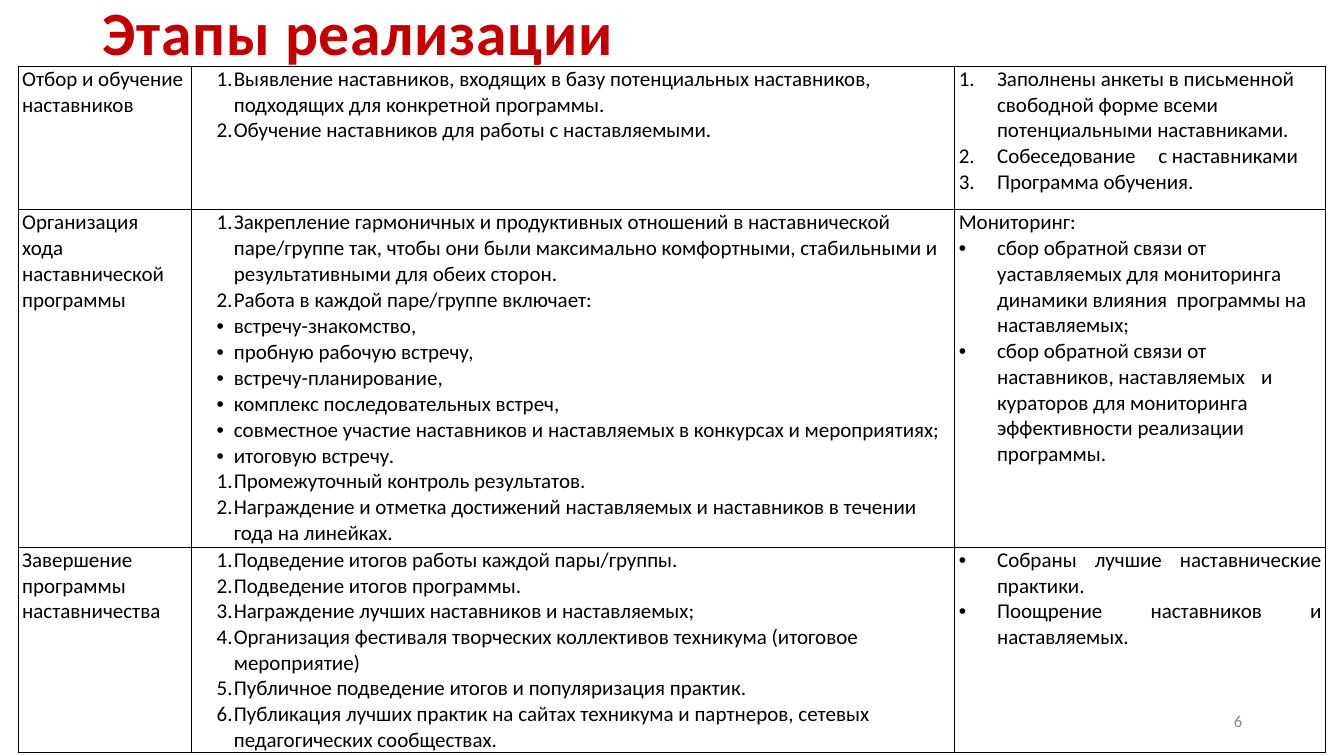
"""Build the slide with the table of mentoring programme stages."""
from dataclasses import dataclass

from lxml.etree import SubElement
from pptx import Presentation
from pptx.dml.color import RGBColor
from pptx.enum.text import MSO_ANCHOR, MSO_AUTO_SIZE, PP_ALIGN
from pptx.oxml import parse_xml
from pptx.oxml.ns import nsdecls, qn
from pptx.util import Emu, Pt

EMU_PER_PX = 9144
FONT = "Calibri"
BLACK = RGBColor(0x00, 0x00, 0x00)
RED = RGBColor(0xC0, 0x00, 0x00)
GREY = RGBColor(0x88, 0x88, 0x88)
WHITE = RGBColor(0xFF, 0xFF, 0xFF)

PLAIN, NUMBER, BULLET = "plain", "number", "bullet"
COLUMN_WIDTHS = (172, 757, 368)
HANGING_INDENTS = (0, 17, 38)
TEXT_INDENT = 38
CELL_MARGIN = 4


@dataclass(frozen=True)
class Entry:
    text: str
    marker: str = PLAIN
    justified: bool = False
    tabs: tuple[int, ...] = ()


@dataclass(frozen=True)
class Stage:
    height: int
    space_before: float
    name: list[Entry]
    actions: list[Entry]
    results: list[Entry]


STAGES = [
    Stage(
        142, 0,
        [Entry("Отбор и обучение наставников")],
        [
            Entry("Выявление наставников, входящих в базу потенциальных наставников, "
                  "подходящих для конкретной программы.", NUMBER),
            Entry("Обучение наставников для работы с наставляемыми.", NUMBER, True),
        ],
        [
            Entry("Заполнены анкеты в письменной свободной форме всеми "
                  "потенциальными наставниками.", NUMBER),
            Entry("Собеседование\tс наставниками", NUMBER, tabs=(20, 132, 164, 198)),
            Entry("Программа обучения.", NUMBER),
        ],
    ),
    Stage(
        335, 0.2,
        [Entry("Организация"), Entry("хода"), Entry("наставнической"), Entry("программы")],
        [
            Entry("Закрепление гармоничных и продуктивных отношений в наставнической "
                  "паре/группе так, чтобы они были максимально комфортными, стабильными "
                  "и результативными для обеих сторон.", NUMBER),
            Entry("Работа в каждой паре/группе включает:", NUMBER),
            Entry("встречу-знакомство,", BULLET),
            Entry("пробную рабочую встречу,", BULLET),
            Entry("встречу-планирование,", BULLET),
            Entry("комплекс последовательных встреч,", BULLET),
            Entry("совместное участие наставников и наставляемых в конкурсах и "
                  "мероприятиях;", BULLET),
            Entry("итоговую встречу.", BULLET),
            Entry("Промежуточный контроль результатов.", NUMBER),
            Entry("Награждение и отметка достижений наставляемых и наставников в "
                  "течении года на линейках.", NUMBER),
        ],
        [
            Entry("Мониторинг:"),
            Entry("сбор обратной связи от yаставляемых для мониторинга динамики "
                  "влияния  программы на наставляемых;", BULLET),
            Entry("сбор обратной связи от наставников, наставляемых\tи кураторов для "
                  "мониторинга эффективности реализации программы.", BULLET),
        ],
    ),
    Stage(
        204, 0,
        [Entry("Завершение программы наставничества", justified=True)],
        [
            Entry("Подведение итогов работы каждой пары/группы.", NUMBER),
            Entry("Подведение итогов программы.", NUMBER),
            Entry("Награждение лучших наставников и наставляемых;", NUMBER),
            Entry("Организация фестиваля творческих коллективов техникума "
                  "(итоговое мероприятие)", NUMBER),
            Entry("Публичное подведение итогов и популяризация практик.", NUMBER),
            Entry("Публикация лучших практик на сайтах техникума и партнеров, "
                  "сетевых педагогических сообществах.", NUMBER),
        ],
        [
            Entry("Собраны лучшие наставнические практики.", BULLET, True),
            Entry("Поощрение наставников и наставляемых.", BULLET, True),
        ],
    ),
]


def px(length: int) -> Emu:
    """Convert a length in px to EMU."""
    return Emu(length * EMU_PER_PX)


def format_runs(paragraph, size: int, color: RGBColor, bold: bool = False) -> None:
    """Apply the slide font to every run of a paragraph."""
    for run in paragraph.runs:
        run.font.name = FONT
        run.font.size = Pt(size)
        run.font.bold = bold
        run.font.color.rgb = color


def add_marker(paragraph, marker: str, hanging: int) -> None:
    """Give a paragraph a number or a bullet with a hanging indent."""
    properties = paragraph._p.get_or_add_pPr()
    properties.set("marL", str(px(TEXT_INDENT)))
    properties.set("indent", str(-px(hanging)))
    color = SubElement(properties, qn("a:buClr"))
    SubElement(color, qn("a:srgbClr"), val=str(BLACK))
    if marker == NUMBER:
        SubElement(properties, qn("a:buFont"), typeface=FONT)
        SubElement(properties, qn("a:buAutoNum"), type="arabicPeriod")
    else:
        SubElement(properties, qn("a:buFont"), typeface="Arial")
        SubElement(properties, qn("a:buChar"), char="•")


def add_tabs(paragraph, tabs: tuple[int, ...]) -> None:
    """Add left tab stops to a paragraph."""
    tab_list = SubElement(paragraph._p.get_or_add_pPr(), qn("a:tabLst"))
    for position in tabs:
        SubElement(tab_list, qn("a:tab"), pos=str(px(position)), algn="l")


def style_cell(cell) -> None:
    """Set the margins, the empty fill and the black borders of a cell."""
    cell.margin_left = cell.margin_right = px(CELL_MARGIN)
    cell.margin_top = cell.margin_bottom = 0
    cell.fill.background()
    properties = cell._tc.get_or_add_tcPr()
    for index, side in enumerate("LRTB"):
        properties.insert(index, parse_xml(
            f'<a:ln{side} {nsdecls("a")} w="{Pt(1)}"><a:solidFill>'
            f'<a:srgbClr val="{BLACK}"/></a:solidFill></a:ln{side}>'))


def fill_cell(cell, entries: list[Entry], hanging: int, space_before: float) -> None:
    """Write the entries into a cell, one paragraph each."""
    style_cell(cell)
    for index, entry in enumerate(entries):
        paragraph = cell.text_frame.add_paragraph() if index else cell.text_frame.paragraphs[0]
        paragraph.text = entry.text
        if entry.marker != PLAIN:
            add_marker(paragraph, entry.marker, hanging)
        if entry.tabs:
            add_tabs(paragraph, entry.tabs)
        if index and space_before:
            paragraph.space_before = Pt(space_before)
        paragraph.alignment = PP_ALIGN.JUSTIFY if entry.justified else PP_ALIGN.LEFT
        format_runs(paragraph, 15, BLACK)


def add_title(slide) -> None:
    """Place and format the title placeholder."""
    title = slide.shapes.title
    title.left, title.top, title.width, title.height = px(92), px(0), px(1150), px(71)
    frame = title.text_frame
    frame.text = "Этапы реализации"
    frame.auto_size = MSO_AUTO_SIZE.NONE
    frame.vertical_anchor = MSO_ANCHOR.MIDDLE
    paragraph = frame.paragraphs[0]
    paragraph.alignment = PP_ALIGN.LEFT
    paragraph.line_spacing = 0.9
    format_runs(paragraph, 44, RED, bold=True)
    paragraph.runs[0]._r.get_or_add_rPr().set("spc", "50")


def add_page_number(slide) -> None:
    """Add the page number at the lower right."""
    frame = slide.shapes.add_textbox(px(942), px(695), px(300), px(40)).text_frame
    frame.word_wrap = True
    frame.vertical_anchor = MSO_ANCHOR.MIDDLE
    frame.text = "6"
    frame.paragraphs[0].alignment = PP_ALIGN.RIGHT
    format_runs(frame.paragraphs[0], 12, GREY)


def add_stage_table(slide) -> None:
    """Add the table with one row per stage."""
    height = sum(stage.height for stage in STAGES)
    table = slide.shapes.add_table(len(STAGES), len(COLUMN_WIDTHS), px(18), px(66),
                                   px(sum(COLUMN_WIDTHS)), px(height)).table
    table.first_row = table.horz_banding = False
    for column, width in zip(table.columns, COLUMN_WIDTHS):
        column.width = px(width)
    for row, stage in zip(table.rows, STAGES):
        row.height = px(stage.height)
        contents = (stage.name, stage.actions, stage.results)
        for cell, entries, hanging in zip(row.cells, contents, HANGING_INDENTS):
            fill_cell(cell, entries, hanging, stage.space_before)


def main() -> None:
    """Build and save the presentation."""
    presentation = Presentation()
    presentation.slide_width, presentation.slide_height = px(1333), px(750)
    slide = presentation.slides.add_slide(presentation.slide_layouts[5])
    slide.background.fill.solid()
    slide.background.fill.fore_color.rgb = WHITE
    add_page_number(slide)
    add_title(slide)
    add_stage_table(slide)
    presentation.save("out.pptx")


if __name__ == "__main__":
    main()
